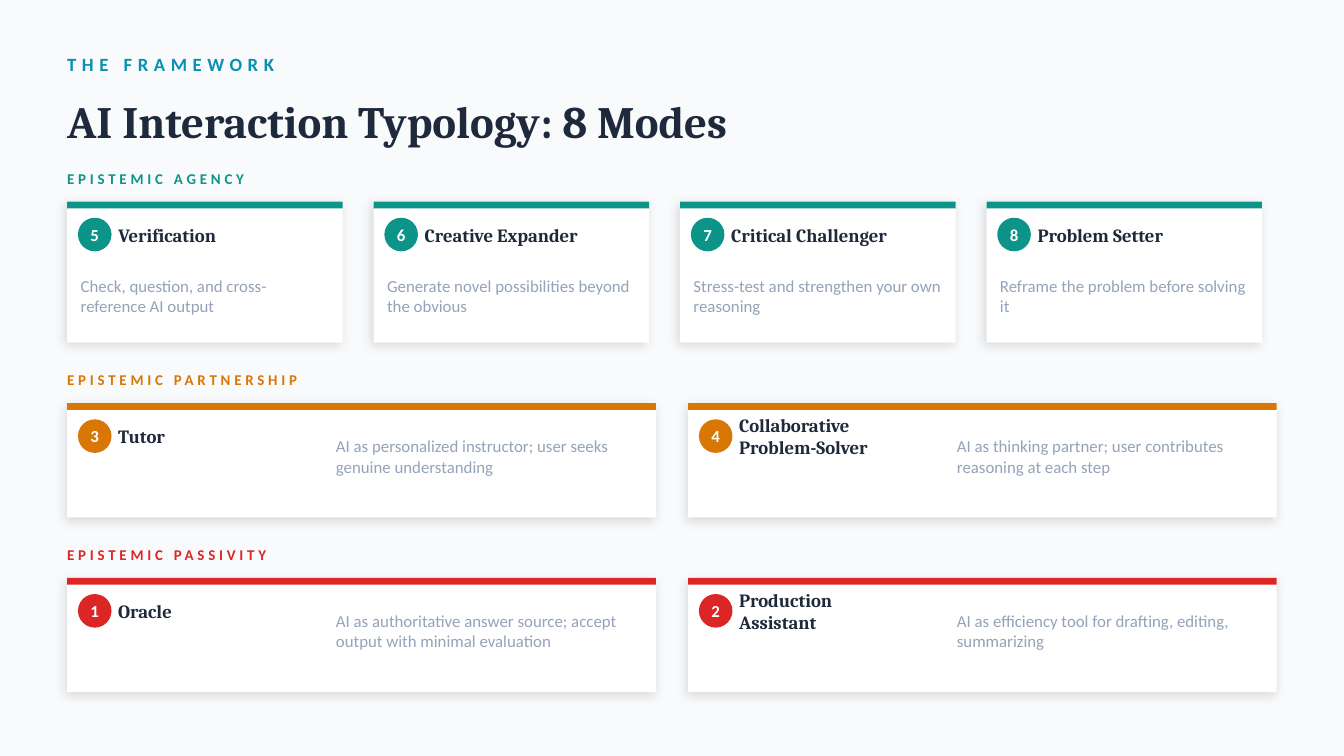
"""Build the slide that sorts eight modes of AI interaction into three levels."""
from dataclasses import dataclass

from lxml.etree import SubElement
from pptx import Presentation
from pptx.dml.color import RGBColor
from pptx.enum.shapes import MSO_SHAPE
from pptx.enum.text import MSO_ANCHOR, PP_ALIGN
from pptx.oxml.ns import qn
from pptx.util import Inches, Pt


@dataclass(frozen=True)
class Theme:
    background: str = "F8FAFC"
    card: str = "FFFFFF"
    ink: str = "1E293B"
    muted: str = "94A3B8"
    accent: str = "0891B2"
    agency: str = "0D9488"
    partnership: str = "D97706"
    passivity: str = "DC2626"
    shadow: str = "000000"
    heading_font: str = "Cambria"
    body_font: str = "Calibri"
    title_size: int = 24
    name_size: int = 10
    eyebrow_size: int = 10
    body_size: int = 9
    label_size: int = 8


def write_text(tf, text, *, size, color, font, bold=False, align=None, spacing=0):
    tf.word_wrap = True
    tf.vertical_anchor = MSO_ANCHOR.MIDDLE
    tf.margin_left = tf.margin_top = tf.margin_right = tf.margin_bottom = 0
    for i, line in enumerate(text.split("\n")):
        p = tf.add_paragraph() if i else tf.paragraphs[0]
        if align is not None:
            p.alignment = align
        r = p.add_run()
        r.text = line
        r.font.size = Pt(size)
        r.font.name = font
        r.font.bold = bold
        r.font.color.rgb = RGBColor.from_string(color)
        if spacing:
            r.font._element.set("spc", str(spacing * 100))


class SlideBuilder:
    def __init__(self, slide, theme):
        self.s = slide
        self.theme = theme
        fill = slide.background.fill
        fill.solid()
        fill.fore_color.rgb = RGBColor.from_string(theme.background)

    def text(self, x, y, w, h, text, **fmt):
        box = self.s.shapes.add_textbox(Inches(x), Inches(y), Inches(w), Inches(h))
        write_text(box.text_frame, text, **fmt)

    def shape(self, kind, x, y, w, h, color):
        sp = self.s.shapes.add_shape(kind, Inches(x), Inches(y), Inches(w), Inches(h))
        sp.shadow.inherit = False
        sp.fill.solid()
        sp.fill.fore_color.rgb = RGBColor.from_string(color)
        sp.line.fill.background()
        return sp

    def add_shadow(self, sp):
        effects = sp._element.spPr.find(qn("a:effectLst"))
        outer = SubElement(effects, qn("a:outerShdw"), blurRad=str(Pt(6)),
                           dist=str(Pt(2)), dir=str(135 * 60000),
                           algn="bl", rotWithShape="0")
        color = SubElement(outer, qn("a:srgbClr"), val=self.theme.shadow)
        SubElement(color, qn("a:alpha"), val="12000")

    def label(self, y, text, color):
        t = self.theme
        self.text(0.5, y, 2.5, 0.25, text, size=t.label_size, color=color,
                  font=t.body_font, bold=True, spacing=2)

    def badge(self, x, y, number, color):
        t = self.theme
        sp = self.shape(MSO_SHAPE.OVAL, x, y, 0.25, 0.25, color)
        write_text(sp.text_frame, str(number), size=t.body_size, color=t.card,
                   font=t.body_font, bold=True, align=PP_ALIGN.CENTER)

    def card(self, x, y, layout, color, number, name, detail):
        t = self.theme
        w, h = layout["size"]
        self.add_shadow(self.shape(MSO_SHAPE.RECTANGLE, x, y, w, h, t.card))
        self.shape(MSO_SHAPE.RECTANGLE, x, y, w, 0.05, color)
        self.badge(x + 0.08, y + 0.12, number, color)
        dx, dy, w, h = layout["name"]
        self.text(x + dx, y + dy, w, h, name, size=t.name_size, color=t.ink,
                  font=t.heading_font, bold=True)
        dx, dy, w, h = layout["detail"]
        self.text(x + dx, y + dy, w, h, detail, size=t.body_size, color=t.muted,
                  font=t.body_font)

    def level(self, y, label, color, layout, first, modes):
        self.label(y, label, color)
        for i, (name, detail) in enumerate(modes):
            self.card(0.5 + i * layout["pitch"], y + 0.3, layout, color,
                      first + i, name, detail)


NARROW = {"size": (2.05, 1.05), "pitch": 2.28,
          "name": (0.38, 0.12, 1.55, 0.25), "detail": (0.1, 0.45, 1.85, 0.5)}
WIDE = {"size": (4.38, 0.85), "pitch": 4.62,
        "name": (0.38, 0.07, 1.6, 0.35), "detail": (2, 0.12, 2.2, 0.55)}


def main():
    t = Theme()
    levels = [
        (1.2, "EPISTEMIC AGENCY", t.agency, NARROW, 5, [
            ("Verification", "Check, question, and cross-reference AI output"),
            ("Creative Expander", "Generate novel possibilities beyond the obvious"),
            ("Critical Challenger", "Stress-test and strengthen your own reasoning"),
            ("Problem Setter", "Reframe the problem before solving it"),
        ]),
        (2.7, "EPISTEMIC PARTNERSHIP", t.partnership, WIDE, 3, [
            ("Tutor",
             "AI as personalized instructor; user seeks genuine understanding"),
            ("Collaborative\nProblem-Solver",
             "AI as thinking partner; user contributes reasoning at each step"),
        ]),
        (4, "EPISTEMIC PASSIVITY", t.passivity, WIDE, 1, [
            ("Oracle",
             "AI as authoritative answer source; accept output with minimal evaluation"),
            ("Production\nAssistant",
             "AI as efficiency tool for drafting, editing, summarizing"),
        ]),
    ]
    prs = Presentation()
    prs.slide_width = Inches(10)
    prs.slide_height = Inches(10 * 9 / 16)
    s = SlideBuilder(prs.slides.add_slide(prs.slide_layouts[6]), t)
    s.text(0.5, 0.3, 3, 0.35, "THE FRAMEWORK", size=t.eyebrow_size, color=t.accent,
           font=t.body_font, bold=True, spacing=3)
    s.text(0.5, 0.65, 9, 0.5, "AI Interaction Typology: 8 Modes", size=t.title_size,
           color=t.ink, font=t.heading_font, bold=True)
    for level in levels:
        s.level(*level)
    prs.save("out.pptx")


if __name__ == "__main__":
    main()
